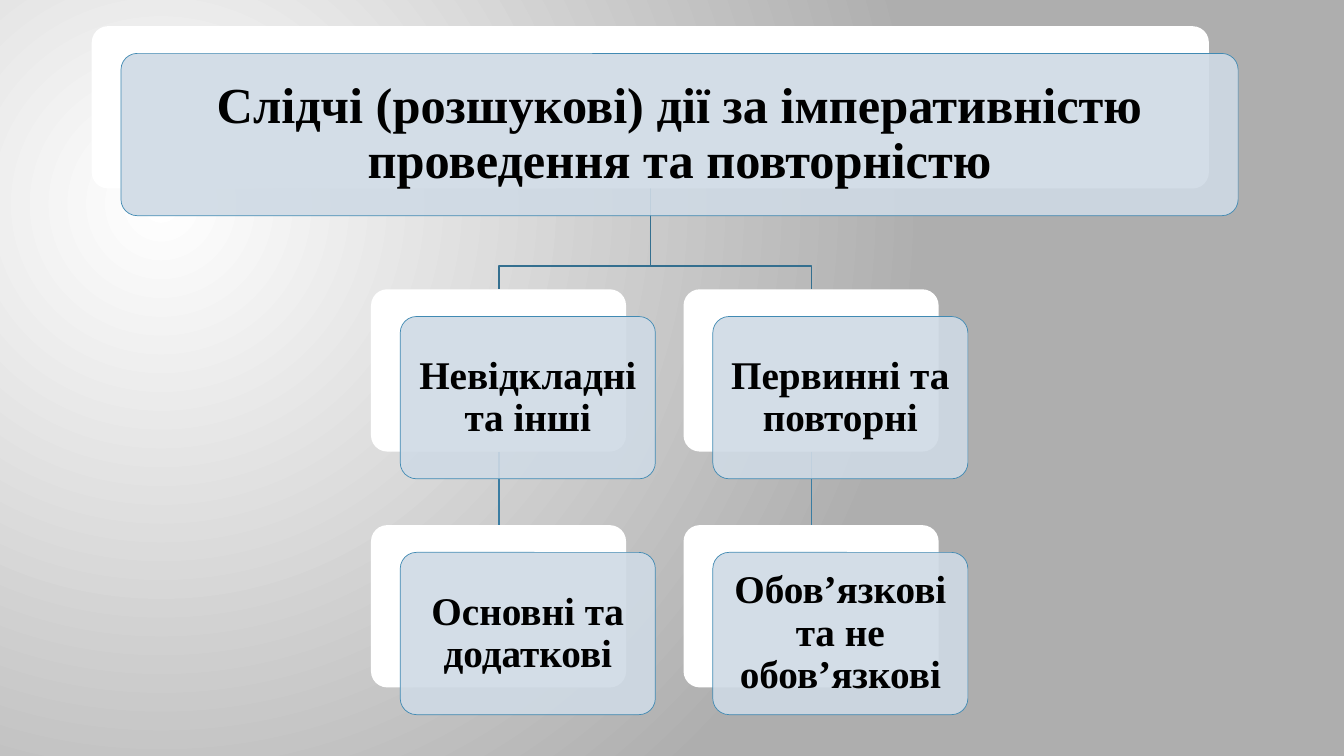
from pptx import Presentation
from pptx.dml.color import RGBColor as Rgb
from pptx.enum.shapes import MSO_CONNECTOR as Link, MSO_SHAPE as Kind
from pptx.enum.text import MSO_ANCHOR as Anchor, PP_ALIGN as Align
from pptx.oxml import parse_xml
from pptx.oxml.ns import qn
from pptx.util import Pt
from lxml.etree import SubElement

TITLE = "Слідчі (розшукові) дії за імперативністю проведення та повторністю"
GROUPS = [
    ["Невідкладні та інші", "Основні та додаткові"],
    ["Первинні та повторні", "Обов’язкові та не обов’язкові"],
]
COLORS = {
    "white": "FFFFFF", "gray": "AEAEAE", "pale": "CFDAE5", "edge": "418AB3",
    "upper": "346F8F", "lower": "3B7DA2", "ink": "000000",
}
SCALE = 9144
WIDE, HIGH = 1333, 750
ROOT = (91, 26, 1108)
LEFT, TOP, WIDTH, TALL = 368, 287, 253, 161
STEP_X, STEP_Y = 310, 234
SHIFT_X, SHIFT_Y = 29, 27
DROP = 23
FONTS = {
    "root": {"size": Pt(36), "name": "Times New Roman", "bold": True},
    "leaf": {"size": Pt(28), "name": "Times New Roman", "bold": True},
}
PADS = {"root": 15, "leaf": 11}
MARGINS = ("margin_left", "margin_top", "margin_right", "margin_bottom")
SPACE = "http://schemas.openxmlformats.org/"


def px(*nums):
    return [num * SCALE for num in nums]


def color(name):
    return Rgb.from_string(COLORS[name])


def backdrop(slide):
    slide.element.cSld.insert(0, parse_xml(
        f'<p:bg xmlns:p="{SPACE}presentationml/2006/main" '
        f'xmlns:a="{SPACE}drawingml/2006/main"><p:bgPr><a:gradFill><a:gsLst>'
        f'<a:gs pos="0"><a:srgbClr val="{COLORS["white"]}"/></a:gs>'
        f'<a:gs pos="100000"><a:srgbClr val="{COLORS["gray"]}"/></a:gs>'
        '</a:gsLst><a:path path="circle"><a:fillToRect l="50000" t="55000" '
        'r="125000" b="100000"/></a:path></a:gradFill><a:effectLst/>'
        '</p:bgPr></p:bg>'))


def stroke(item, name, width):
    item.line.color.rgb = color(name)
    item.line.width = Pt(width)


def middle(x, width):
    return x + (width + 1) // 2


def branch(shapes, x):
    start, y = middle(ROOT[0], ROOT[2]), ROOT[1] + TALL
    bend = TOP - DROP
    build = shapes.build_freeform(start, y, scale=SCALE)
    build.add_line_segments([(start, bend), (x, bend), (x, TOP)], close=False)
    line = build.convert_to_shape()
    line.shadow.inherit = False
    line.fill.background()
    stroke(line, "upper", 1)


def stem(shapes, x):
    line = shapes.add_connector(
        Link.STRAIGHT, *px(x, TOP + TALL, x, TOP + STEP_Y))
    SubElement(line.element.spPr, qn("a:effectLst"))
    stroke(line, "lower", 1)


def panel(shapes, x, y, width, fill):
    box = shapes.add_shape(Kind.ROUNDED_RECTANGLE, *px(x, y, width, TALL))
    box.adjustments[0] = 0.1
    box.shadow.inherit = False
    box.fill.solid()
    box.fill.fore_color.rgb = color(fill)
    box.line.fill.background()
    return box


def card(shapes, x, y, width, text, role):
    panel(shapes, x, y, width, "white")
    front = panel(shapes, x + SHIFT_X, y + SHIFT_Y, width, "pale")
    stroke(front, "edge", 0.5)
    tint = front.element.spPr.find(qn("a:solidFill"))[0]
    SubElement(tint, qn("a:alpha"), val="90000")
    frame = front.text_frame
    frame.word_wrap = True
    frame.vertical_anchor = Anchor.MIDDLE
    for side in MARGINS:
        setattr(frame, side, PADS[role] * SCALE)
    para = frame.paragraphs[0]
    para.alignment = Align.CENTER
    para.line_spacing = 0.9
    run = para.add_run()
    run.text = text
    for key, value in FONTS[role].items():
        setattr(run.font, key, value)
    run.font.color.rgb = color("ink")


def main():
    deck = Presentation()
    deck.slide_width, deck.slide_height = px(WIDE, HIGH)
    slide = deck.slides.add_slide(deck.slide_layouts[6])
    backdrop(slide)
    shapes = slide.shapes
    lefts = [LEFT + col * STEP_X for col in range(len(GROUPS))]
    for x in lefts:
        branch(shapes, middle(x, WIDTH))
        stem(shapes, middle(x, WIDTH))
    card(shapes, *ROOT, TITLE, "root")
    for x, group in zip(lefts, GROUPS):
        for row, text in enumerate(group):
            card(shapes, x, TOP + row * STEP_Y, WIDTH, text, "leaf")
    deck.save("out.pptx")


if __name__ == "__main__":
    main()
